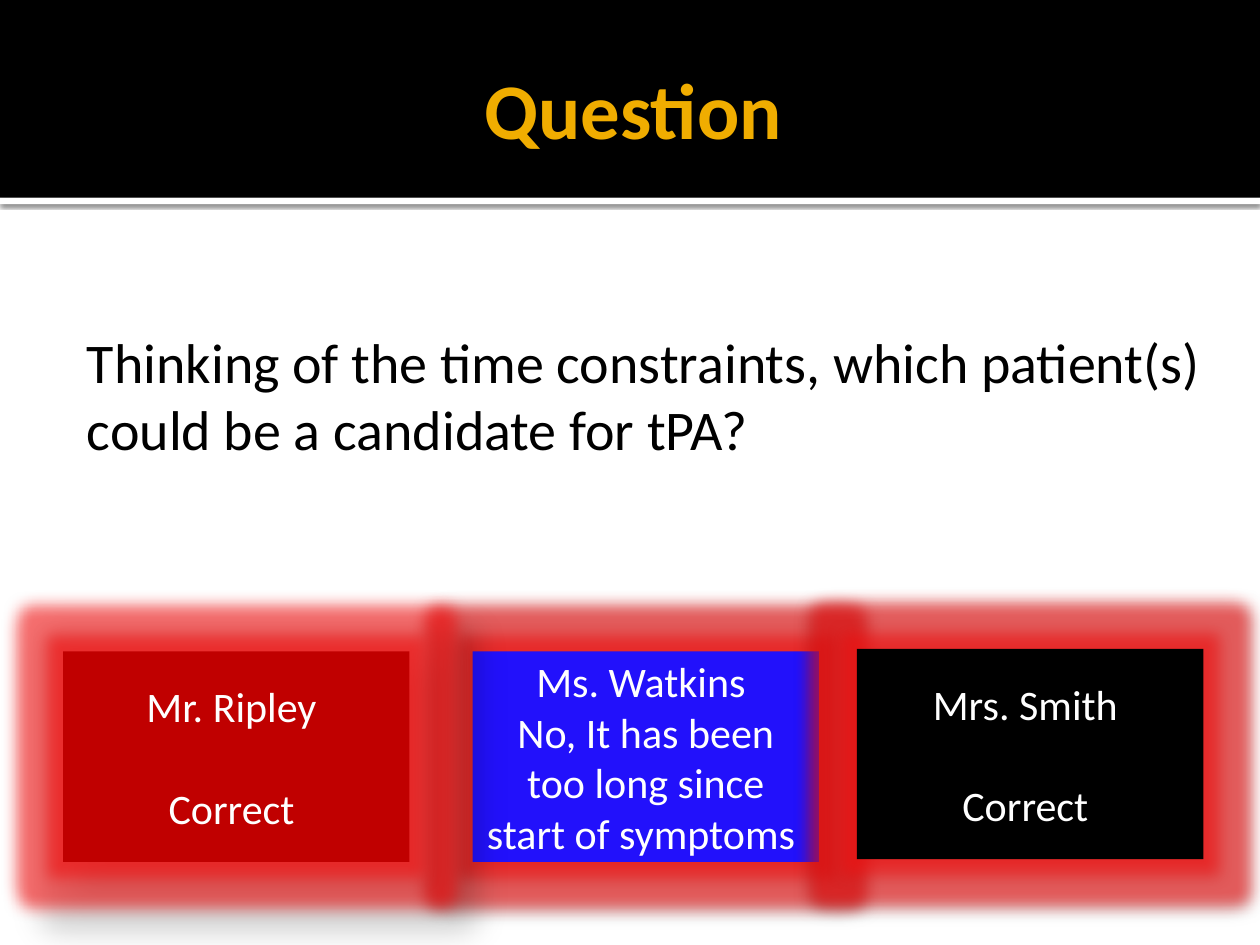
from lxml.etree import SubElement
from pptx import Presentation
from pptx.dml.color import RGBColor
from pptx.enum.shapes import MSO_SHAPE as Shape
from pptx.enum.text import MSO_ANCHOR as Anchor, MSO_AUTO_SIZE as AutoSize, PP_ALIGN as Align
from pptx.oxml.ns import qn
from pptx.util import Inches, Pt

BLACK = RGBColor(0x00, 0x00, 0x00)
WHITE = RGBColor(0xFF, 0xFF, 0xFF)
GOLD = RGBColor(0xF0, 0xAD, 0x00)
RED = RGBColor(0xC0, 0x00, 0x00)
BLUE = RGBColor(0x22, 0x11, 0xFB)
GLOW = RGBColor(0xF0, 0x10, 0x10)
FONT = "Calibri"

TITLE = "Question"
QUESTION = "Thinking of the time constraints, which patient(s) could be a candidate for tPA?"

# Shadows: opacity in percent, blur and distance in points, direction in degrees
RULE_SHADOW = (60, 2.5, 0.8, 90)
SOFT_SHADOW = (32, 3.5, 2.2, 90)
FAR_SHADOW = (30, 15, 18, 45)

CARD_SIZE = (2.75, 1.67)
# left, top, fill, shadow, name, verdict, points between name and verdict
CARDS = [
    (3.75, 5.17, BLUE, SOFT_SHADOW, "Ms. Watkins ",
     "No, It has been too long since start of symptoms ", 0),
    (6.8, 5.15, BLACK, SOFT_SHADOW, "Mrs. Smith ", "Correct ", 29),
    (0.5, 5.17, RED, FAR_SHADOW, "Mr. Ripley ", "Correct ", 29),
]


def place(shape, left, top, width, height):
    shape.left, shape.top = Inches(left), Inches(top)
    shape.width, shape.height = Inches(width), Inches(height)


def set_insets(frame, left, top, right, bottom):
    frame.margin_left, frame.margin_top = Inches(left), Inches(top)
    frame.margin_right, frame.margin_bottom = Inches(right), Inches(bottom)


def style(para, size, color, bold=False):
    font = para.font
    font.name, font.size, font.bold = FONT, Pt(size), bold
    font.color.rgb = color


def add_color(effect, color, opacity):
    node = SubElement(effect, qn("a:srgbClr"), val=str(color))
    SubElement(node, qn("a:alpha"), val=str(opacity * 1000))


def add_effects(shape, shadow, glow=False):
    shape.shadow.inherit = False
    effects = shape._element.spPr.find(qn("a:effectLst"))
    if glow:
        halo = SubElement(effects, qn("a:glow"), rad=str(Pt(18)))
        add_color(halo, GLOW, 60)
    opacity, blur, distance, direction = shadow
    outer = SubElement(effects, qn("a:outerShdw"), blurRad=str(Pt(blur)),
                       dist=str(Pt(distance)), dir=str(direction * 60000),
                       algn="tl", rotWithShape="0")
    add_color(outer, BLACK, opacity)


def add_rect(page, left, top, width, height, fill):
    rect = page.shapes.add_shape(Shape.RECTANGLE, Inches(left), Inches(top),
                                 Inches(width), Inches(height))
    rect.shadow.inherit = False
    rect.fill.solid()
    rect.fill.fore_color.rgb = fill
    rect.line.fill.background()
    return rect


def add_header(page):
    band = add_rect(page, 0, 0, 10, 1.57, BLACK)
    rule = add_rect(page, 0, 1.57, 10, 0.05, WHITE)
    add_effects(rule, RULE_SHADOW)
    for shape in (band, rule):  # behind the placeholders
        page.shapes._spTree.insert(2, shape._element)


def fill_title(title):
    place(title, 0.5, 0.17, 9, 1.37)
    frame = title.text_frame
    frame.text = TITLE
    frame.auto_size = AutoSize.NONE
    frame.vertical_anchor = Anchor.MIDDLE
    set_insets(frame, 0.1, 0.05, 0.05, 0.05)
    para = frame.paragraphs[0]
    para.alignment = Align.CENTER
    style(para, 45, GOLD, bold=True)


def fill_body(body):
    place(body, 0.5, 1.94, 9.17, 5.06)
    frame = body.text_frame
    frame.text = QUESTION
    frame.auto_size = AutoSize.NONE
    set_insets(frame, 0.06, 0.66, 0.1, 0.05)
    para = frame.paragraphs[0]
    props = para._p.get_or_add_pPr()
    props.set("marL", str(Inches(0.13)))
    props.set("indent", "0")
    SubElement(props, qn("a:buNone"))
    para.space_before = Pt(0)
    style(para, 32, BLACK)


def add_card(page, left, top, fill, shadow, name, verdict, gap):
    card = add_rect(page, left, top, *CARD_SIZE, fill)
    add_effects(card, shadow, glow=True)
    frame = card.text_frame
    frame.word_wrap = True
    frame.vertical_anchor = Anchor.MIDDLE
    frame.text = f"{name}\n{verdict}"
    for para in frame.paragraphs:
        para.alignment = Align.CENTER
        style(para, 24, WHITE)
    frame.paragraphs[1].space_before = Pt(gap)


def main():
    deck = Presentation()
    deck.slide_width, deck.slide_height = Inches(10), Inches(7.5)
    page = deck.slides.add_slide(deck.slide_layouts[1])
    add_header(page)
    fill_title(page.shapes.title)
    fill_body(page.placeholders[1])
    for card in CARDS:
        add_card(page, *card)
    deck.save("out.pptx")


if __name__ == "__main__":
    main()
